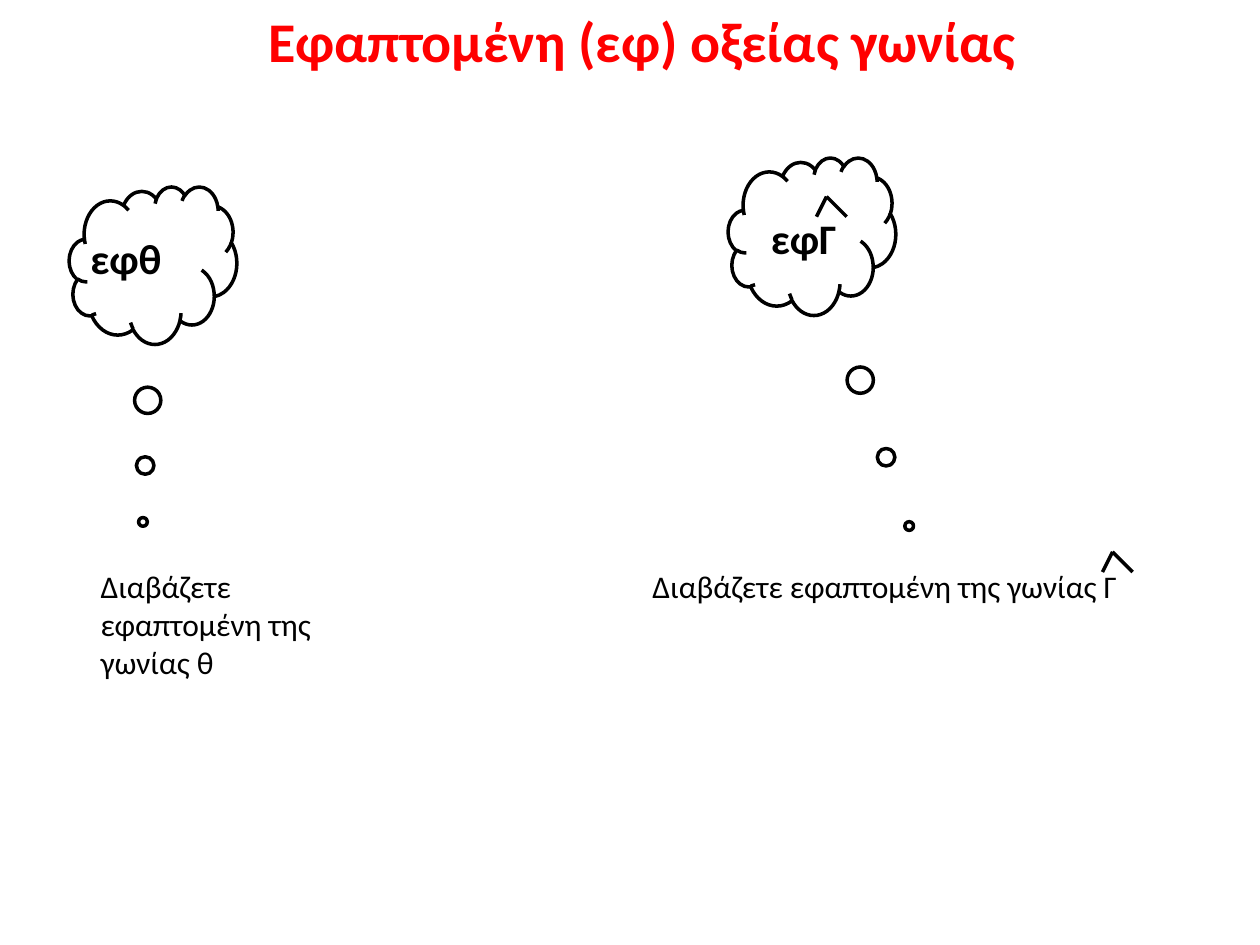
from pptx import Presentation
from pptx.dml.color import RGBColor
from pptx.enum.shapes import MSO_CONNECTOR as Connector, MSO_SHAPE as Shape
from pptx.enum.text import MSO_AUTO_SIZE as AutoSize
from pptx.oxml.ns import qn
from pptx.util import Inches, Pt
from lxml import etree

BLACK = RGBColor(0, 0, 0)
RED = RGBColor(255, 0, 0)
LINE_WIDTH = Pt(2)


def add_text(page, text, box, size=18, bold=False, color=BLACK):
    textbox = page.shapes.add_textbox(*map(Inches, box))
    frame = textbox.text_frame
    frame.word_wrap = True
    frame.auto_size = AutoSize.SHAPE_TO_FIT_TEXT
    span = frame.paragraphs[0].add_run()
    span.text = text
    span.font.name = "Calibri"
    span.font.size = Pt(size)
    span.font.bold = bold
    span.font.color.rgb = color


def add_thought(page, left, top, tail):
    cloud = page.shapes.add_shape(
        Shape.CLOUD_CALLOUT, Inches(left), Inches(top), Inches(1.33), Inches(1.25))
    cloud.shadow.inherit = False
    cloud.fill.background()
    cloud.line.color.rgb = BLACK
    cloud.line.width = LINE_WIDTH
    for index, offset in enumerate(tail):
        cloud.adjustments[index] = offset


def add_angle_hat(page, x, y):
    hat = page.shapes.add_group_shape()
    for reach in (-0.08, 0.16):
        stroke = hat.shapes.add_connector(
            Connector.STRAIGHT, Inches(x), Inches(y), Inches(x + reach), Inches(y + 0.16))
        stroke.line.color.rgb = BLACK
        stroke.line.width = LINE_WIDTH
        etree.SubElement(stroke._element.spPr, qn("a:effectLst"))


def build_slide(page):
    add_text(page, "Εφαπτομένη (εφ) οξείας γωνίας", (2.03, 0, 6.88, 0.64),
             size=32, bold=True, color=RED)

    add_thought(page, 0.55, 1.48, tail=(-0.06, 1.63))
    add_text(page, "εφθ", (0.62, 1.8, 1.17, 0.5), size=24, bold=True)
    add_text(page, "Διαβάζετε εφαπτομένη της γωνίας θ", (0.7, 4.45, 2.27, 1.01))

    add_thought(page, 5.78, 1.25, tail=(0.58, 1.84))
    add_text(page, "εφΓ", (6.02, 1.64, 1.41, 0.5), size=24, bold=True)
    add_angle_hat(page, 6.56, 1.56)
    add_text(page, "Διαβάζετε εφαπτομένη της γωνίας Γ", (5.08, 4.45, 4.92, 0.4))
    add_angle_hat(page, 8.83, 4.38)


def main():
    deck = Presentation()
    deck.slide_width = Inches(10)
    deck.slide_height = Inches(7.5)
    build_slide(deck.slides.add_slide(deck.slide_layouts[6]))
    deck.save("out.pptx")


if __name__ == "__main__":
    main()
